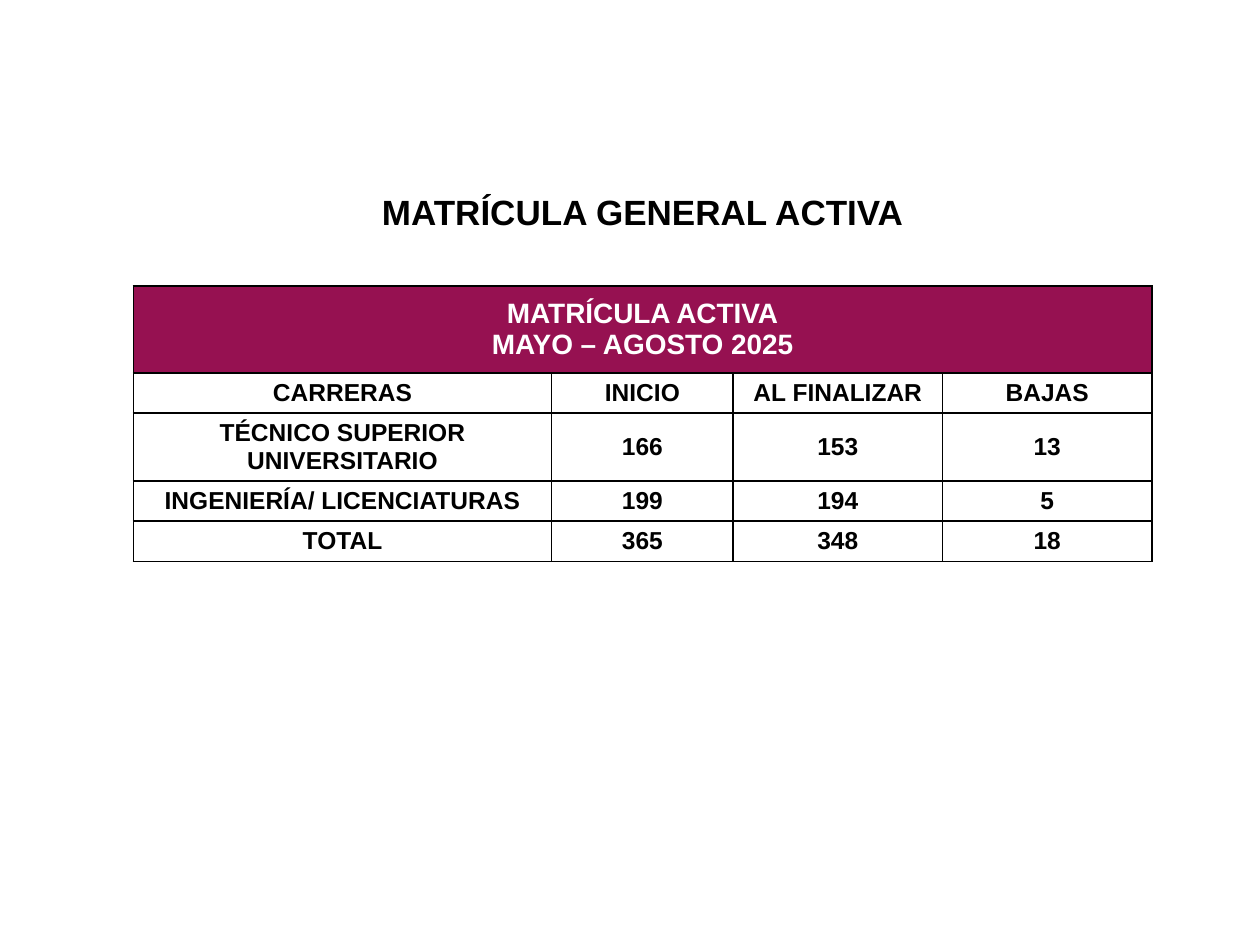
from lxml.etree import SubElement
from pptx import Presentation
from pptx.dml.color import RGBColor
from pptx.enum.text import MSO_ANCHOR, PP_ALIGN
from pptx.oxml.ns import qn
from pptx.util import Cm, Pt

TITLE = "MATRÍCULA GENERAL ACTIVA"
BANNER = "MATRÍCULA ACTIVA\nMAYO – AGOSTO 2025"
ROWS = [
    ("CARRERAS", "INICIO", "AL FINALIZAR", "BAJAS"),
    ("TÉCNICO SUPERIOR UNIVERSITARIO", "166", "153", "13"),
    ("INGENIERÍA/ LICENCIATURAS", "199", "194", "5"),
    ("TOTAL", "365", "348", "18"),
]
COL_WIDTHS = [8.43, 3.66, 4.22, 4.22]
ROW_HEIGHTS = [1.75, 0.81, 1.36, 0.81, 0.81]
BLACK, WHITE, MAROON = "000000", "FFFFFF", "961151"


def rgb(value):
    return RGBColor.from_string(value)


def write(tf, text, size, color):
    tf.text = text
    font_format = {"name": "Arial", "size": Pt(size), "bold": True}
    for p in tf.paragraphs:
        p.alignment = PP_ALIGN.CENTER
        for r in p.runs:
            for name, value in font_format.items():
                setattr(r.font, name, value)
            r.font.color.rgb = rgb(color)


def style_cell(cell, fill):
    """Fill the cell, centre it vertically and draw its four borders."""
    cell.vertical_anchor = MSO_ANCHOR.MIDDLE
    tc_pr = cell._tc.get_or_add_tcPr()
    for side in ("lnL", "lnR", "lnT", "lnB"):
        ln = SubElement(tc_pr, qn(f"a:{side}"), w=str(Pt(1)))
        solid = SubElement(ln, qn("a:solidFill"))
        SubElement(solid, qn("a:srgbClr"), val=BLACK)
    cell.fill.solid()
    cell.fill.fore_color.rgb = rgb(fill)


prs = Presentation()
prs.slide_width, prs.slide_height = Cm(25.4), Cm(19.05)
s = prs.slides.add_slide(prs.slide_layouts[5])

title = s.shapes.title
title.left, title.top, title.width, title.height = Cm(5.36), Cm(3.71), Cm(15.19), Cm(1.12)
title.text_frame.vertical_anchor = MSO_ANCHOR.MIDDLE
write(title.text_frame, TITLE, 20, BLACK)

table = s.shapes.add_table(
    len(ROW_HEIGHTS), len(COL_WIDTHS), Cm(2.69), Cm(5.77),
    Cm(sum(COL_WIDTHS)), Cm(sum(ROW_HEIGHTS))).table
for column, width in zip(table.columns, COL_WIDTHS):
    column.width = Cm(width)
for row, height in zip(table.rows, ROW_HEIGHTS):
    row.height = Cm(height)

for i, row in enumerate(table.rows):
    for cell in row.cells:
        style_cell(cell, WHITE if i else MAROON)

banner = table.cell(0, 0)
banner.merge(table.cell(0, len(COL_WIDTHS) - 1))
write(banner.text_frame, BANNER, 16, WHITE)
for i, values in enumerate(ROWS, start=1):
    for j, value in enumerate(values):
        write(table.cell(i, j).text_frame, value, 14, BLACK)

prs.save("out.pptx")
